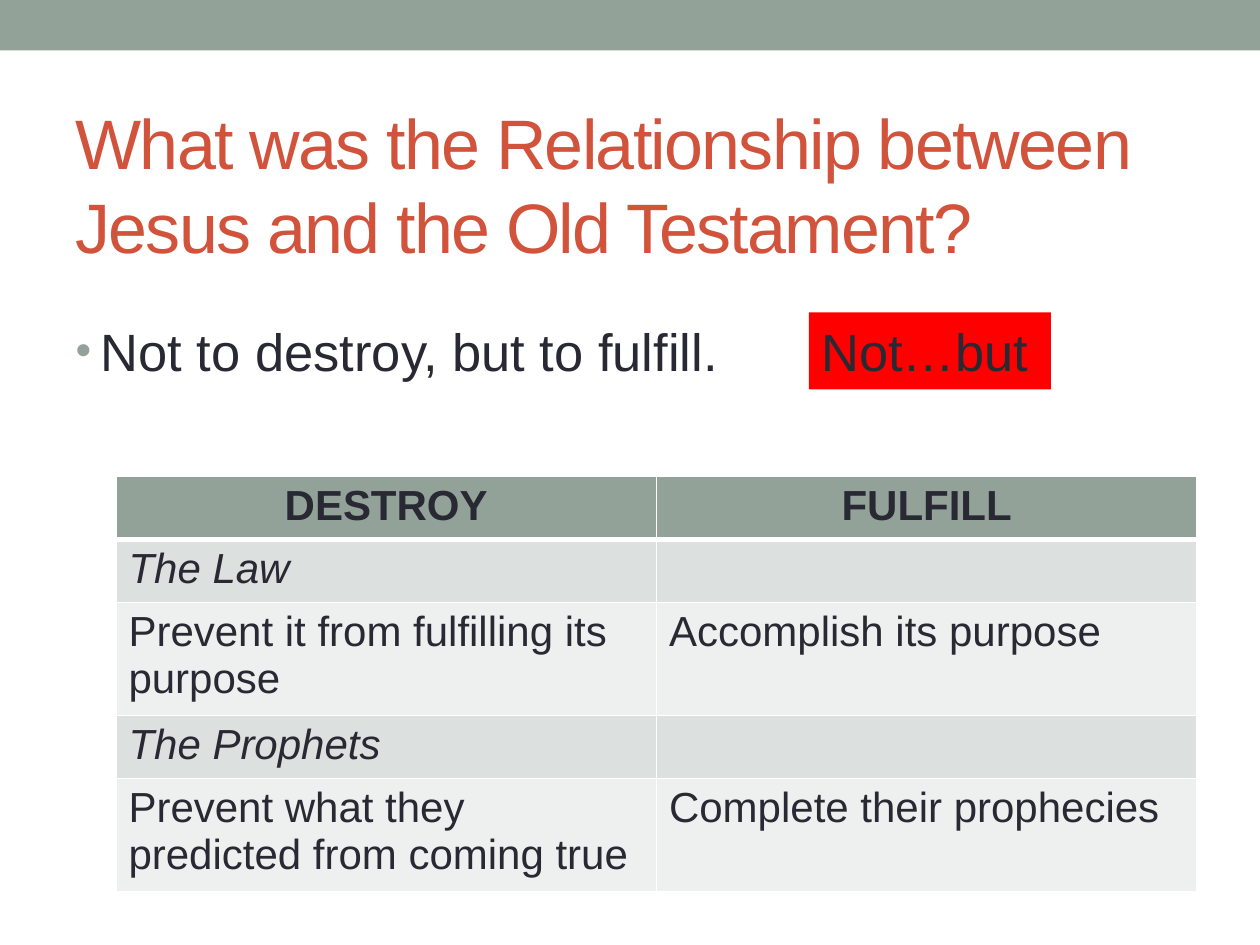
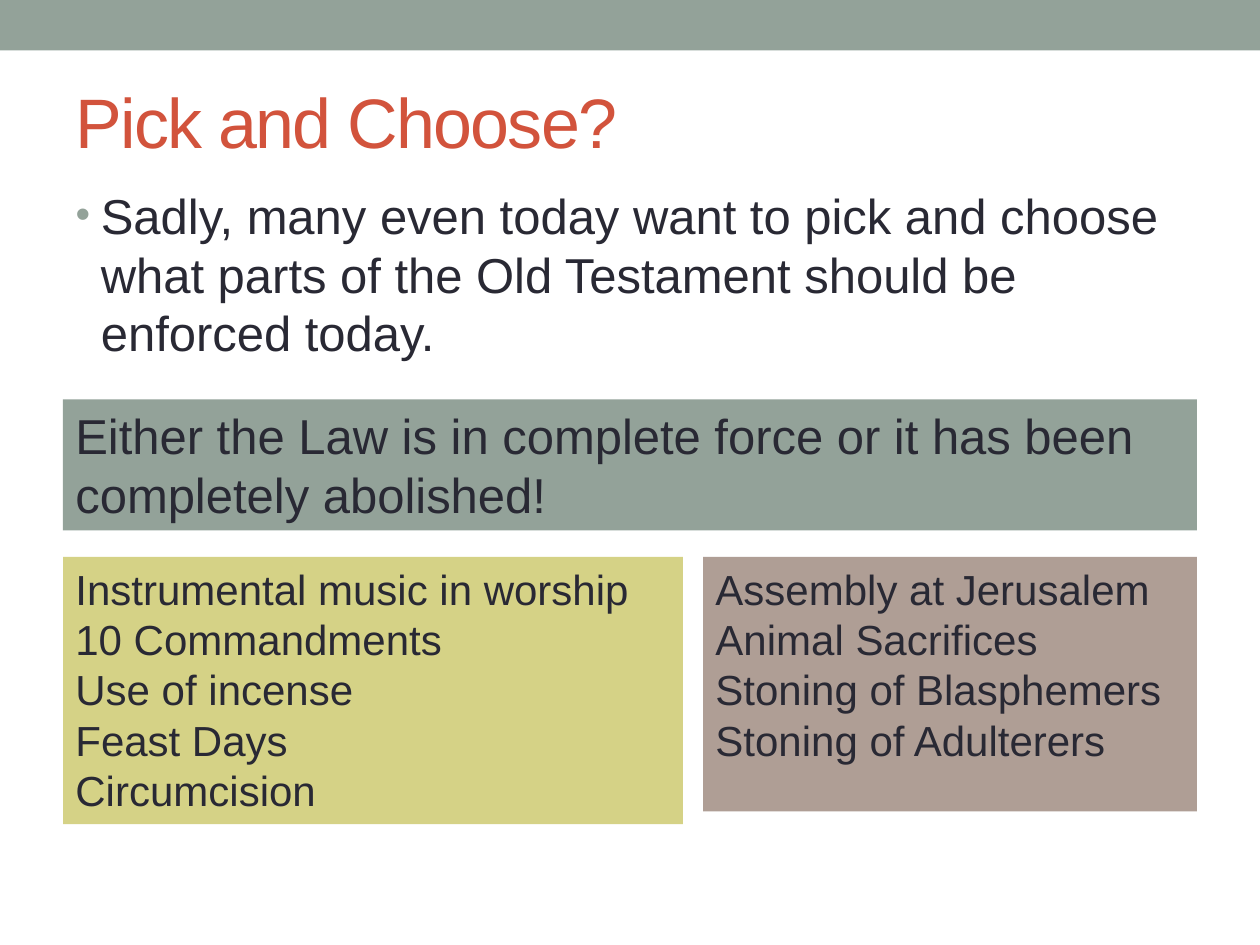
from lxml.etree import SubElement
from pptx import Presentation
from pptx.dml.color import RGBColor
from pptx.enum.shapes import MSO_SHAPE
from pptx.enum.text import MSO_ANCHOR, MSO_AUTO_SIZE, PP_ALIGN
from pptx.oxml.ns import qn
from pptx.util import Inches, Pt

FONT = "Arial"
SAGE, RUST, INK, WHITE = "93A299", "D2533C", "292934", "FFFFFF"
RED, OLIVE, TAUPE = "FF0000", "D5D286", "AF9E95"
STRIPES = "DCE0DE", "EEF0EF"
LEFT, WIDE = 0.5, 9

# Boxes: place, fill, text size, lines
SLIDES = [
    {
        "title": "What was the Relationship between Jesus and the Old Testament?",
        "title_at": (LEFT, 0.58, WIDE, 1.75),
        "body": "Not to destroy, but to fulfill.",
        "body_at": (LEFT, 2.48, WIDE, 0.94),
        "size": 30,
        "boxes": [((6.42, 2.48, 1.92, 0.61), RED, 30, ["Not…but"])],
        "table": [
            ("DESTROY", "FULFILL"),
            ("The Law", ""),
            ("Prevent it from fulfilling its purpose", "Accomplish its purpose"),
            ("The Prophets", ""),
            ("Prevent what they predicted from coming true",
             "Complete their prophecies"),
        ],
        "table_at": (0.92, 3.78, 8.58, 3.3),
    },
    {
        "title": "Pick and Choose?",
        "title_at": (LEFT, 0.42, WIDE, 1.08),
        "body": "Sadly, many even today want to pick and choose what parts "
                "of the Old Testament should be enforced today.",
        "body_at": (LEFT, 1.42, WIDE, 1.54),
        "size": 28,
        "boxes": [
            ((LEFT, 3.17, WIDE, 1.04), SAGE, 28,
             ["Either the Law is in complete force or it has been "
              "completely abolished!"]),
            ((LEFT, 4.42, 4.92, 2.12), OLIVE, 24,
             ["Instrumental music in worship", "10 Commandments",
              "Use of incense", "Feast Days", "Circumcision"]),
            ((5.58, 4.42, 3.92, 2.02), TAUPE, 24,
             ["Assembly at Jerusalem", "Animal Sacrifices",
              "Stoning of Blasphemers", "Stoning of Adulterers"]),
        ],
    },
]


def color(code):
    return RGBColor.from_string(code)


def paint(part, code):
    part.fill.solid()
    part.fill.fore_color.rgb = color(code)


def style(frame, size, code=INK, align=PP_ALIGN.LEFT, bold=False, italic=False):
    for par in frame.paragraphs:
        par.alignment = align
        for run in par.runs:
            font = run.font
            font.name, font.size = FONT, Pt(size)
            font.bold, font.italic = bold, italic
            font.color.rgb = color(code)


def place(shape, at):
    shape.left, shape.top, shape.width, shape.height = map(Inches, at)


def add_box(slide, at, fill):
    box = slide.shapes.add_shape(MSO_SHAPE.RECTANGLE, *map(Inches, at))
    box.shadow.inherit = False
    paint(box, fill)
    box.line.fill.background()
    return box


def add_band(slide, master):
    """Draw the top band and move it to the master, behind everything."""
    band = add_box(slide, (0, 0, 10, 0.4), SAGE)
    master.shapes.element.insert(2, band.element)


def add_title(slide, text, at):
    title = slide.shapes.title
    place(title, at)
    frame = title.text_frame
    frame.text = text
    frame.auto_size = MSO_AUTO_SIZE.NONE
    frame.vertical_anchor = MSO_ANCHOR.MIDDLE
    style(frame, 40, RUST)
    for run in frame.paragraphs[0].runs:
        run.font._element.set("spc", "-100")


def add_body(slide, text, at, size):
    body = slide.placeholders[1]
    place(body, at)
    frame = body.text_frame
    frame.text = text
    frame.auto_size = MSO_AUTO_SIZE.NONE
    style(frame, size)
    props = frame.paragraphs[0]._p.get_or_add_pPr()
    props.set("marL", str(Inches(0.2)))
    props.set("indent", str(-Inches(0.2)))
    tint = SubElement(props, qn("a:buClr"))
    SubElement(tint, qn("a:srgbClr"), val=SAGE)
    SubElement(props, qn("a:buSzPct"), val="85000")
    SubElement(props, qn("a:buChar"), char="•")


def add_note(slide, at, fill, size, lines):
    frame = add_box(slide, at, fill).text_frame
    frame.word_wrap = True
    frame.vertical_anchor = MSO_ANCHOR.TOP
    frame.text = "\n".join(lines)
    style(frame, size)


def add_edges(cell, head):
    """Put white borders round a cell, with a thick one below the header."""
    props = cell._tc.get_or_add_tcPr()
    for spot, side in enumerate(("lnL", "lnR", "lnT", "lnB")):
        width = 3 if head and side == "lnB" else 1
        edge = props.makeelement(qn("a:" + side), {"w": str(Pt(width))})
        fill = SubElement(edge, qn("a:solidFill"))
        SubElement(fill, qn("a:srgbClr"), val=WHITE)
        props.insert(spot, edge)


def add_grid(slide, rows, at):
    grid = slide.shapes.add_table(len(rows), len(rows[0]), *map(Inches, at)).table
    for r, row in enumerate(rows):
        head = r == 0
        # Rows with the longer entries hold two lines
        grid.rows[r].height = Inches(0.9 if r and r % 2 == 0 else 0.5)
        for c, text in enumerate(row):
            cell = grid.cell(r, c)
            cell.text = text
            paint(cell, SAGE if head else STRIPES[(r - 1) % 2])
            style(cell.text_frame, 24, bold=head, italic=r % 2 == 1,
                  align=PP_ALIGN.CENTER if head else PP_ALIGN.LEFT)
            add_edges(cell, head)


def main():
    deck = Presentation()
    deck.slide_width, deck.slide_height = Inches(10), Inches(7.5)
    for index, data in enumerate(SLIDES):
        slide = deck.slides.add_slide(deck.slide_layouts[1])
        if index == 0:
            add_band(slide, deck.slide_master)
        add_title(slide, data["title"], data["title_at"])
        add_body(slide, data["body"], data["body_at"], data["size"])
        for box in data["boxes"]:
            add_note(slide, *box)
        if "table" in data:
            add_grid(slide, data["table"], data["table_at"])
    deck.save("out.pptx")


if __name__ == "__main__":
    main()
